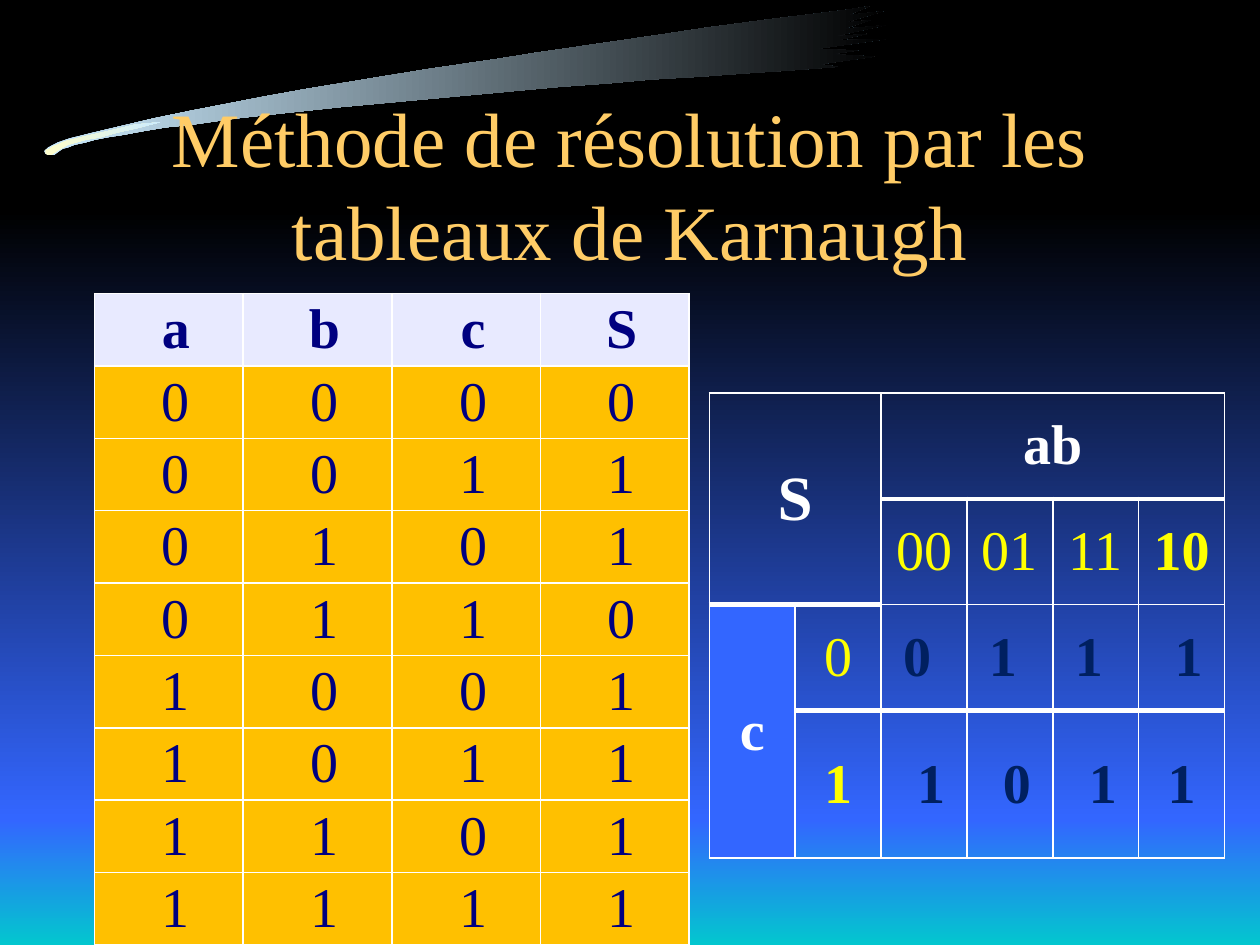
from dataclasses import dataclass
from itertools import product

from lxml.etree import SubElement
from pptx import Presentation
from pptx.dml.color import RGBColor as RGB
from pptx.enum.text import MSO_ANCHOR as Anchor, MSO_AUTO_SIZE as AutoSize, PP_ALIGN as Align
from pptx.enum.shapes import MSO_SHAPE as Shape
from pptx.oxml.ns import qn
from pptx.util import Inches, Pt


@dataclass(frozen=True)
class Theme:
    font: str = "Times New Roman"
    black: str = "000000"
    blue: str = "3366FF"
    cyan: str = "00CCCC"
    ice: str = "CCECFF"
    cream: str = "FFFFCC"
    gold: str = "FFCC66"
    header: str = "E8EAFF"
    amber: str = "FFC000"
    ink: str = "000080"
    white: str = "FFFFFF"
    yellow: str = "FFFF00"
    navy: str = "002060"
    title_size: int = 44
    corner_size: int = 36
    cell_size: int = 32
    thin: int = 1
    thick: int = 3


THEME = Theme()

BRUSH = [
    (6.65, 0.53), (6.5, 0.51), (6.94, 0.45), (6.6, 0.43), (6.81, 0.4), (6.47, 0.39),
    (7.03, 0.31), (6.64, 0.32), (6.88, 0.27), (6.61, 0.29), (7.03, 0.2), (6.69, 0.23),
    (6.91, 0.16), (6.7, 0.18), (7.01, 0.09), (6.73, 0.12), (6.9, 0.05), (6.71, 0.08),
    (6.47, 0.11), (6.14, 0.15), (5.61, 0.22), (5.28, 0.27), (4.94, 0.32), (4.25, 0.42),
    (3.94, 0.47), (3.73, 0.5), (3.39, 0.55), (2.96, 0.62), (2.41, 0.71), (2.08, 0.77),
    (1.51, 0.88), (1.22, 0.94), (0.71, 1.06), (0.55, 1.1), (0.46, 1.13), (0.38, 1.17),
    (0.36, 1.19), (0.35, 1.2), (0.36, 1.22), (0.38, 1.23), (0.43, 1.23), (0.47, 1.2),
    (0.5, 1.18), (0.54, 1.17), (0.59, 1.15), (0.68, 1.13), (0.75, 1.11), (0.85, 1.09),
    (0.98, 1.07), (1.14, 1.04), (1.32, 1.01), (1.52, 0.99), (1.87, 0.94), (2.14, 0.91),
    (2.7, 0.85), (3.35, 0.79), (3.89, 0.74), (4.43, 0.69), (4.84, 0.66), (5.17, 0.63),
    (5.53, 0.61), (5.94, 0.58), (6.25, 0.56),
]
BRUSH_TIP = [
    (0.36, 1.19), (0.39, 1.18), (0.42, 1.16), (0.45, 1.15), (0.52, 1.12), (0.64, 1.09),
    (0.86, 1.04), (1.07, 0.99), (1.27, 0.97), (1.08, 1.02), (0.94, 1.05), (0.8, 1.09),
    (0.68, 1.11), (0.54, 1.15), (0.47, 1.19), (0.44, 1.21), (0.41, 1.23), (0.38, 1.23),
    (0.36, 1.22), (0.36, 1.21),
]

TRUTH_OUTPUTS = "01101111"

HEADING = (THEME.white, True)
CODE = (THEME.yellow, False)
STRONG_CODE = (THEME.yellow, True)
OUTPUT = (THEME.navy, True)
KARNAUGH = {
    (0, 0): ("S", HEADING), (0, 2): ("ab", HEADING), (2, 0): ("c", HEADING),
    (1, 2): ("00", CODE), (1, 3): ("01", CODE), (1, 4): ("11", CODE), (1, 5): ("10", STRONG_CODE),
    (2, 1): ("0", CODE), (3, 1): ("1", STRONG_CODE),
    (2, 2): ("0 ", OUTPUT), (2, 3): ("1 ", OUTPUT), (2, 4): ("1 ", OUTPUT), (2, 5): (" 1", OUTPUT),
    (3, 2): (" 1", OUTPUT), (3, 3): (" 0", OUTPUT), (3, 4): (" 1", OUTPUT), (3, 5): ("1", OUTPUT),
}
THICK_TOPS = {*product([1], range(2, 6)), *product([2], range(2)), *product([3], range(1, 6))}


def paint_gradient(shape, start, end, angle):
    shape.shadow.inherit = False
    shape.line.fill.background()
    shape.fill.gradient()
    shape.fill.gradient_angle = angle
    for stop, color in zip(shape.fill.gradient_stops, (start, end)):
        stop.color.rgb = RGB.from_string(color)


def add_band(slide, top, height, start, end):
    band = slide.shapes.add_shape(
        Shape.RECTANGLE, Inches(-0.01), Inches(top), Inches(10.07), Inches(height))
    paint_gradient(band, start, end, 270)


def add_stroke(slide, outline, start, end):
    points = [(Inches(x), Inches(y)) for x, y in outline]
    builder = slide.shapes.build_freeform(*points[0])
    builder.add_line_segments(points[1:], close=True)
    paint_gradient(builder.convert_to_shape(), start, end, 0)


def format_text(paragraph, size, color, bold=False):
    paragraph.alignment = Align.CENTER
    font = paragraph.font
    font.name, font.size, font.bold = THEME.font, Pt(size), bold
    font.color.rgb = RGB.from_string(color)


def set_title(slide, text):
    title = slide.shapes.title
    title.left, title.top, title.width, title.height = map(Inches, (0.75, 0.83, 8.5, 1.25))
    frame = title.text_frame
    frame.text = text
    frame.word_wrap = True
    frame.auto_size = AutoSize.NONE
    frame.vertical_anchor = Anchor.MIDDLE
    format_text(frame.paragraphs[0], THEME.title_size, THEME.gold)
    slide.shapes._spTree.append(title._element)


def add_grid(slide, left, top, width, row_heights, column_count):
    grid = slide.shapes.add_table(
        len(row_heights), column_count, Inches(left), Inches(top),
        Inches(width), Inches(sum(row_heights))).table
    grid.first_row = grid.horz_banding = False
    for row, height in zip(grid.rows, row_heights):
        row.height = Inches(height)
    for column in grid.columns:
        column.width = Inches(width / column_count)
    return grid


def set_borders(cell, top, bottom):
    properties = cell._tc.get_or_add_tcPr()
    widths = {"lnL": THEME.thin, "lnR": THEME.thin, "lnT": top, "lnB": bottom}
    for position, (side, width) in enumerate(widths.items()):
        line = SubElement(properties, qn(f"a:{side}"), w=str(Pt(width)))
        SubElement(SubElement(line, qn("a:solidFill")), qn("a:srgbClr"), val=THEME.white)
        properties.insert(position, line)


def format_cell(cell, fill, side_margin, top=THEME.thin, bottom=THEME.thin):
    cell.vertical_anchor = Anchor.MIDDLE
    cell.margin_left = cell.margin_right = Inches(side_margin)
    cell.margin_top = cell.margin_bottom = 0
    if fill:
        cell.fill.solid()
        cell.fill.fore_color.rgb = RGB.from_string(fill)
    else:
        cell.fill.background()
    set_borders(cell, top, bottom)


def add_truth_table(slide):
    inputs = product("01", repeat=3)
    rows = ["abcS", *(bits + (out,) for bits, out in zip(inputs, TRUTH_OUTPUTS))]
    grid = add_grid(slide, 0.75, 2.33, 4.72, [5.17 / len(rows)] * len(rows), 4)
    for r, values in enumerate(rows):
        for c, value in enumerate(values):
            cell = grid.cell(r, c)
            cell.text = value
            format_cell(cell, THEME.amber if r else THEME.header, 0.05)
            paragraph = cell.text_frame.paragraphs[0]
            format_text(paragraph, THEME.cell_size, THEME.ink, r == 0)
            paragraph.space_before = Pt(2.1)
            paragraph._p.get_or_add_pPr().set("marL", str(Inches(0.11)))


def add_karnaugh_map(slide):
    grid = add_grid(slide, 5.63, 3.12, 4.09, [0.84, 0.84, 0.84, 1.17], 6)
    for first, last in (((0, 0), (1, 1)), ((0, 2), (0, 5)), ((2, 0), (3, 0))):
        grid.cell(*first).merge(grid.cell(*last))
    for r, c in product(range(4), range(6)):
        cell = grid.cell(r, c)
        top, bottom = (
            THEME.thick if (edge, c) in THICK_TOPS else THEME.thin
            for edge in (r, r + cell.span_height))
        format_cell(cell, THEME.blue if (r, c) == (2, 0) else None, 0.07, top, bottom)
        if (r, c) in KARNAUGH:
            text, (color, bold) = KARNAUGH[r, c]
            cell.text = text
            size = THEME.corner_size if (r, c) == (0, 0) else THEME.cell_size
            format_text(cell.text_frame.paragraphs[0], size, color, bold)


def main():
    deck = Presentation()
    deck.slide_width, deck.slide_height = Inches(10), Inches(7.5)
    slide = deck.slides.add_slide(deck.slide_layouts[5])
    slide.background.fill.solid()
    slide.background.fill.fore_color.rgb = RGB.from_string(THEME.black)
    add_band(slide, 1.67, 4.83, THEME.black, THEME.blue)
    add_band(slide, 6.5, 1.06, THEME.blue, THEME.cyan)
    add_stroke(slide, BRUSH, THEME.ice, THEME.black)
    add_stroke(slide, BRUSH_TIP, THEME.cream, THEME.ice)
    set_title(slide, "Méthode de résolution par les tableaux de Karnaugh")
    add_truth_table(slide)
    add_karnaugh_map(slide)
    deck.save("out.pptx")


if __name__ == "__main__":
    main()
